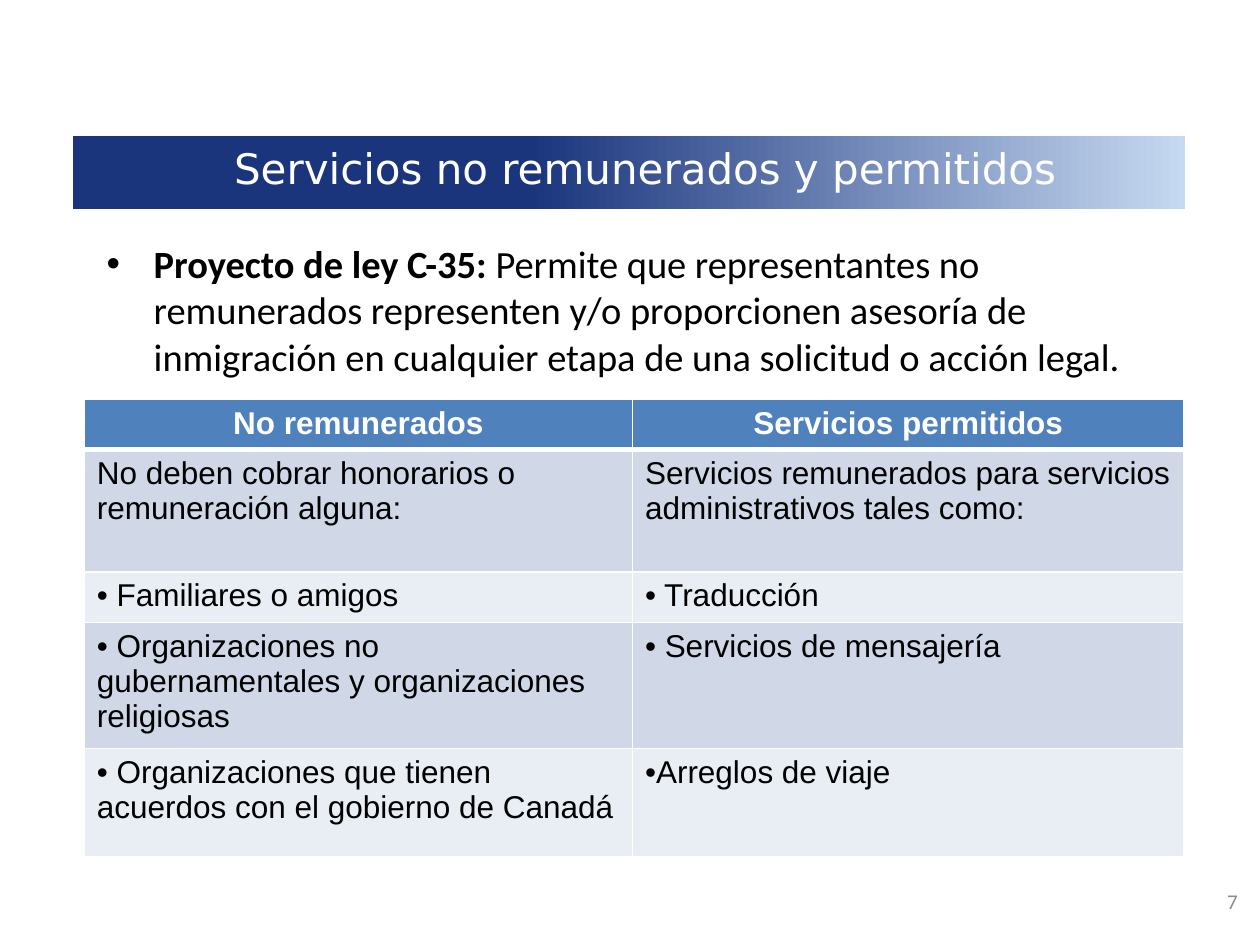
from lxml.etree import SubElement
from pptx import Presentation
from pptx.dml.color import RGBColor
from pptx.enum.shapes import MSO_SHAPE as Shape
from pptx.enum.text import MSO_ANCHOR as Anchor, PP_ALIGN as Align
from pptx.oxml.ns import qn
from pptx.util import Cm, Pt

TITLE = {"name": "DejaVu Sans", "size": Pt(24), "bold": False}
BODY = {"name": "Calibri", "size": Pt(22)}
NUMBER = {"name": "Calibri", "size": Pt(12)}
CELL = {"name": "Arial", "size": Pt(18)}

HEADINGS = ["No remunerados", "Servicios permitidos"]
INTRO = [
    "No deben cobrar honorarios o remuneración alguna:",
    "Servicios remunerados para servicios administrativos tales como:",
]
ITEMS = [
    [" Familiares o amigos", " Traducción"],
    [" Organizaciones no gubernamentales y organizaciones religiosas",
     " Servicios de mensajería"],
    [" Organizaciones que tienen acuerdos con el gobierno de Canadá",
     "Arreglos de viaje"],
]
COLUMN_WIDTHS = [11.05, 11.12]
ROW_HEIGHTS = [0.94, 2.46, 0.97, 2.39, 2.18]


def color(value):
    """Turn a hex string into a colour."""
    return RGBColor.from_string(value)


def lengths(box):
    """Turn a box in centimetres into slide lengths."""
    return [Cm(value) for value in box]


def add_span(para, text, style, ink, **extra):
    """Add a formatted run to a paragraph."""
    span = para.add_run()
    span.text = text
    for name, value in {**style, **extra}.items():
        setattr(span.font, name, value)
    span.font.color.rgb = color(ink)


def add_bullet(para, indent=0):
    """Give a paragraph a round bullet with a hanging indent."""
    properties = para._p.get_or_add_pPr()
    properties.set("marL", str(Cm(indent)))
    properties.set("indent", str(-Cm(indent)))
    SubElement(properties, qn("a:buFont"), typeface="Arial")
    SubElement(properties, qn("a:buChar"), char="•")


def add_text_box(page, box, anchor=Anchor.TOP):
    """Add a wrapping text box and return its frame."""
    frame = page.shapes.add_textbox(*lengths(box)).text_frame
    frame.word_wrap = True
    frame.vertical_anchor = anchor
    return frame


def add_title(page, box):
    """Place the title over a gradient band."""
    left, top, width, height = box
    title = page.shapes.title
    title.left, title.top, title.width, title.height = lengths(box)
    band_box = (left - 0.43, top + 0.2, width + 0.21, height - 0.23)
    band = page.shapes.add_shape(Shape.RECTANGLE, *lengths(band_box))
    band.shadow.inherit = False
    band.line.fill.background()
    band.fill.gradient()
    band.fill.gradient_angle = 0
    stops = [(0.41, "1B357D"), (1, "C6D9F1")]
    for stop, (position, shade) in zip(band.fill.gradient_stops, stops):
        stop.position = position
        stop.color.rgb = color(shade)
    title.element.addprevious(band.element)
    frame = title.text_frame
    frame.vertical_anchor = Anchor.MIDDLE
    para = frame.paragraphs[0]
    para.alignment = Align.CENTER
    add_span(para, "Servicios no remunerados y permitidos", TITLE, "FFFFFF")


def add_body(page, box):
    """Write the bulleted summary of the bill."""
    para = add_text_box(page, box).paragraphs[0]
    add_bullet(para, 0.95)
    add_span(para, "Proyecto de ley C-35: ", BODY, "000000", bold=True)
    add_span(para, "Permite que representantes no remunerados representen y/o "
             "proporcionen asesoría de inmigración en cualquier etapa de una "
             "solicitud o acción legal.", BODY, "000000", bold=False)


def add_borders(cell, top, bottom):
    """Draw white borders around a cell."""
    properties = cell._tc.get_or_add_tcPr()
    for side, width in {"L": 1, "R": 1, "T": top, "B": bottom}.items():
        line = SubElement(properties, qn(f"a:ln{side}"), w=str(Pt(width)))
        fill = SubElement(line, qn("a:solidFill"))
        SubElement(fill, qn("a:srgbClr"), val="FFFFFF")


def add_services(page, box):
    """Build the table of unpaid people and permitted services."""
    rows = [HEADINGS, INTRO, *ITEMS]
    table = page.shapes.add_table(len(rows), len(HEADINGS), *lengths(box)).table
    for column, width in zip(table.columns, COLUMN_WIDTHS):
        column.width = Cm(width)
    for index, (row, height, texts) in enumerate(zip(table.rows, ROW_HEIGHTS, rows)):
        row.height = Cm(height)
        heading = index == 0
        shade = "4F81BD" if heading else ("E9EDF4", "D0D8E8")[index % 2]
        for cell, text in zip(row.cells, texts):
            add_borders(cell, 3 if index == 1 else 1, 3 if heading else 1)
            cell.fill.solid()
            cell.fill.fore_color.rgb = color(shade)
            para = cell.text_frame.paragraphs[0]
            if heading:
                para.alignment = Align.CENTER
            if texts in ITEMS:
                add_bullet(para)
            add_span(para, text, CELL, "FFFFFF" if heading else "000000", bold=heading)


def add_number(page, box):
    """Write the page number."""
    para = add_text_box(page, box, Anchor.MIDDLE).paragraphs[0]
    para.alignment = Align.RIGHT
    add_span(para, "7", NUMBER, "8C8C8C")


def main():
    """Build and save the deck."""
    deck = Presentation()
    deck.slide_width, deck.slide_height = Cm(25.4), Cm(19.05)
    page = deck.slides.add_slide(deck.slide_layouts[5])
    add_title(page, (1.9, 2.54, 22.22, 1.7))
    add_body(page, (1.9, 4.72, 21.8, 12.19))
    add_number(page, (22.86, 17.65, 2.34, 1.02))
    add_services(page, (1.7, 8.05, sum(COLUMN_WIDTHS), sum(ROW_HEIGHTS)))
    deck.save("out.pptx")


if __name__ == "__main__":
    main()
